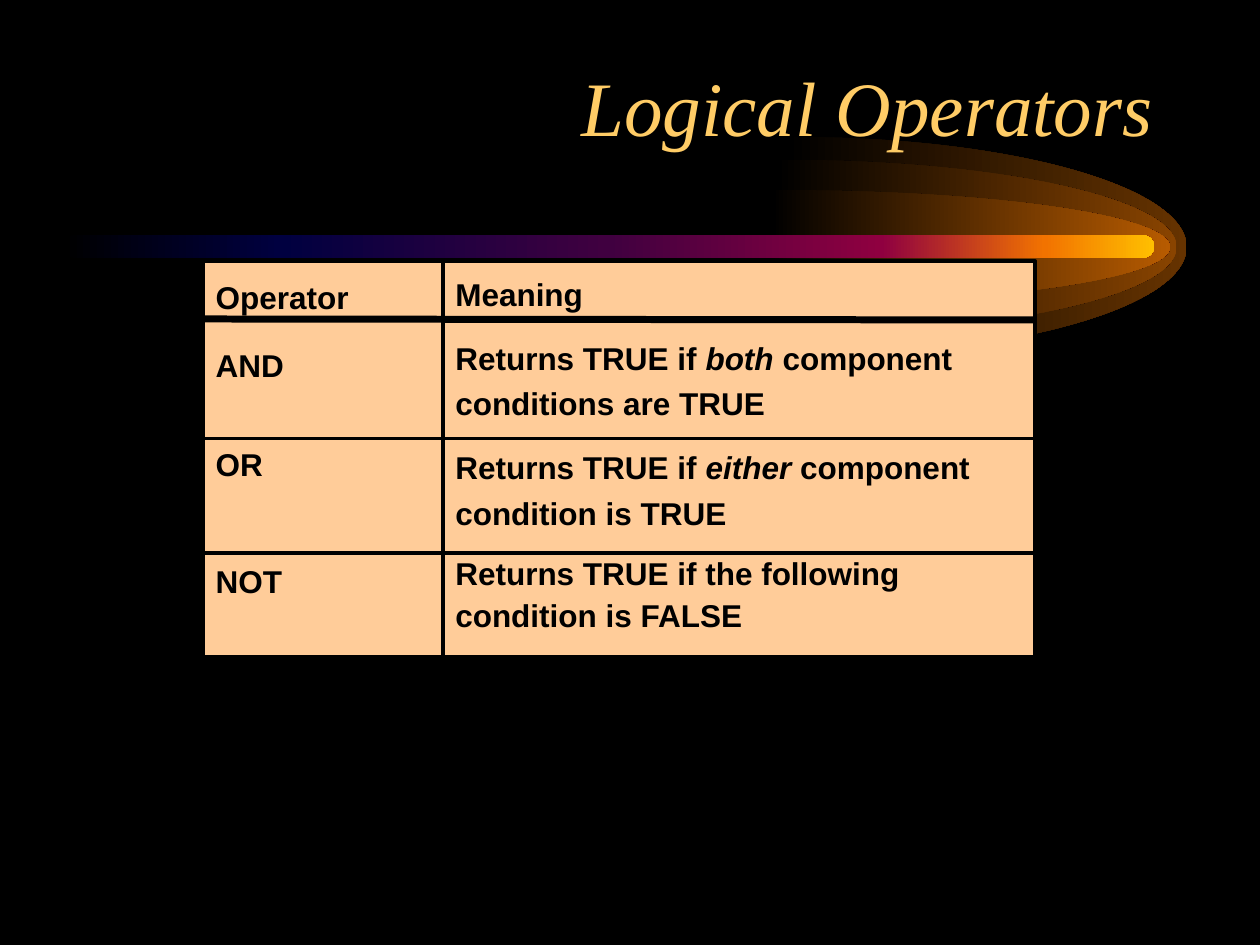
from lxml.etree import SubElement
from pptx import Presentation
from pptx.dml.color import RGBColor
from pptx.enum.shapes import MSO_CONNECTOR as CONN, MSO_SHAPE as SHAPE
from pptx.enum.text import MSO_ANCHOR as ANCHOR, MSO_AUTO_SIZE as AUTO, PP_ALIGN as ALIGN
from pptx.oxml.ns import qn
from pptx.util import Cm, Pt

BLACK = RGBColor(0x00, 0x00, 0x00)
GOLD = RGBColor(0xFF, 0xCC, 0x66)
PEACH = RGBColor(0xFF, 0xCC, 0x99)
BROWN = RGBColor(0x66, 0x33, 0x00)
RUST = RGBColor(0x89, 0x44, 0x00)
COPPER = RGBColor(0xB7, 0x5B, 0x00)
NAVY = RGBColor(0x00, 0x00, 0x40)
PURPLE = RGBColor(0x40, 0x00, 0x40)
CRIMSON = RGBColor(0x8F, 0x00, 0x40)
ORANGE = RGBColor(0xF2, 0x73, 0x00)
AMBER = RGBColor(0xFF, 0xBF, 0x00)

ARC = 0.55  # handle length of a quarter ellipse, as a share of its radius


def add_text(p, text, font="Arial", size=18, color=BLACK, bold=False, italic=False):
    """Add one formatted run to a paragraph."""
    r = p.add_run()
    r.text = text
    f = r.font
    f.name, f.size, f.bold, f.italic = font, Pt(size), bold, italic
    f.color.rgb = color


class SlideBuilder:
    def __init__(self, prs):
        self.s = prs.slides.add_slide(prs.slide_layouts[5])
        self.s.background.fill.solid()
        self.s.background.fill.fore_color.rgb = BLACK

    def gradient(self, sp, stops):
        """Fill a shape from left to right with (percent, colour) stops."""
        sp.shadow.inherit = False
        sp.line.fill.background()
        sp.fill.gradient()
        sp.fill.gradient_angle = 0
        gs_list = sp._element.spPr.find(qn("a:gradFill")).find(qn("a:gsLst"))
        for gs in list(gs_list):
            gs_list.remove(gs)
        for percent, color in stops:
            gs = SubElement(gs_list, qn("a:gs"), pos=str(percent * 1000))
            SubElement(gs, qn("a:srgbClr"), val=str(color))

    def halo(self, cx, cy, rx, ry, color, tail=0.12):
        """Right half of an ellipse, fading to black on its left."""
        outline = [(cx + rx, cy), (cx, cy + ry), (cx - tail, cy + ry), (cx, cy)]
        fb = self.s.shapes.build_freeform(Cm(cx), Cm(cy - ry))
        fb.add_line_segments([(Cm(x), Cm(y)) for x, y in outline], close=True)
        sp = fb.convert_to_shape()
        # Bend the first two segments into quarter ellipses
        handles = [[(ARC * rx, -ry), (rx, -ARC * ry)], [(rx, ARC * ry), (ARC * rx, ry)]]
        lines = list(sp._element.iter(qn("a:lnTo")))
        for line, pair in zip(lines, handles):
            line.tag = qn("a:cubicBezTo")
            for i, (dx, dy) in enumerate(pair):
                pt = SubElement(line, qn("a:pt"), x=str(Cm(tail + dx)), y=str(Cm(ry + dy)))
                line.insert(i, pt)
        self.gradient(sp, [(0, BLACK), (100, color)])

    def bar(self, x, y, w, h, stops):
        sp = self.s.shapes.add_shape(SHAPE.ROUNDED_RECTANGLE, Cm(x), Cm(y), Cm(w), Cm(h))
        sp.adjustments[0] = 0.5
        self.gradient(sp, stops)

    def title(self, text, x, y, w, h):
        sp = self.s.shapes.title
        sp.left, sp.top, sp.width, sp.height = Cm(x), Cm(y), Cm(w), Cm(h)
        tf = sp.text_frame
        tf.auto_size, tf.word_wrap = AUTO.NONE, True
        tf.vertical_anchor = ANCHOR.TOP
        p = tf.paragraphs[0]
        p.alignment = ALIGN.RIGHT
        add_text(p, text, font="Times New Roman", size=44, color=GOLD, italic=True)
        self.s.shapes._spTree.append(sp._element)  # in front of the halo

    def column(self, x, y, w, h, rows):
        """Box of rows: (line spacing, points before, [(text, italic), ...])."""
        sp = self.s.shapes.add_shape(SHAPE.RECTANGLE, Cm(x), Cm(y), Cm(w), Cm(h))
        sp.shadow.inherit = False
        sp.fill.solid()
        sp.fill.fore_color.rgb = PEACH
        sp.line.color.rgb, sp.line.width = BLACK, Pt(2)
        tf = sp.text_frame
        tf.word_wrap, tf.vertical_anchor = True, ANCHOR.TOP
        for i, (spacing, before, runs) in enumerate(rows):
            p = tf.add_paragraph() if i else tf.paragraphs[0]
            p.alignment, p.line_spacing = ALIGN.LEFT, spacing
            if i:
                p.space_before = Pt(before)
            for text, italic in runs:
                add_text(p, text, bold=True, italic=italic)

    def rule(self, x1, y1, x2, y2, width):
        c = self.s.shapes.add_connector(CONN.STRAIGHT, Cm(x1), Cm(y1), Cm(x2), Cm(y2))
        c.line.color.rgb, c.line.width = BLACK, Pt(width)
        SubElement(c._element.spPr, qn("a:effectLst"))


def main():
    prs = Presentation()
    prs.slide_width, prs.slide_height = Cm(25.4), Cm(19.05)
    b = SlideBuilder(prs)

    # Comet: three halos and the bar
    for cx, ry, color in [(15.97, 2.22, BROWN), (15.77, 1.76, RUST), (15.64, 1.15, COPPER)]:
        b.halo(cx, 4.98, 7.95, ry, color)
    b.bar(1.27, 4.74, 22, 0.46, [(0, BLACK), (20, NAVY), (50, PURPLE),
                                 (75, CRIMSON), (90, ORANGE), (100, AMBER)])

    b.title("Logical Operators", 1.9, 1.07, 21.6, 3.17)

    # Operator and meaning columns
    left, top, height = 4.1, 5.26, 7.98
    names = [("Operator", 0), ("AND", 10.8), ("OR", 28), ("NOT", 39)]
    b.column(left, top, 4.88, height,
             [(1.3, before, [(name, False)]) for name, before in names])
    b.column(8.93, top, 11.94, height, [
        (1.2, 0, [("Meaning", False)]),
        (1.2, 10.8, [("Returns TRUE if ", False), ("both ", True),
                     ("component conditions are TRUE", False)]),
        (1.2, 10.8, [("Returns TRUE if ", False), ("either ", True),
                     ("component condition is TRUE", False)]),
        (1.1, 10.8, [("Returns TRUE if the following condition is FALSE", False)]),
    ])

    # Row rules
    for y1, y2, width in [(6.43, 6.45, 4), (8.84, 8.84, 2), (11.15, 11.15, 2)]:
        b.rule(left, y1, 20.87, y2, width)

    prs.save("out.pptx")


if __name__ == "__main__":
    main()
